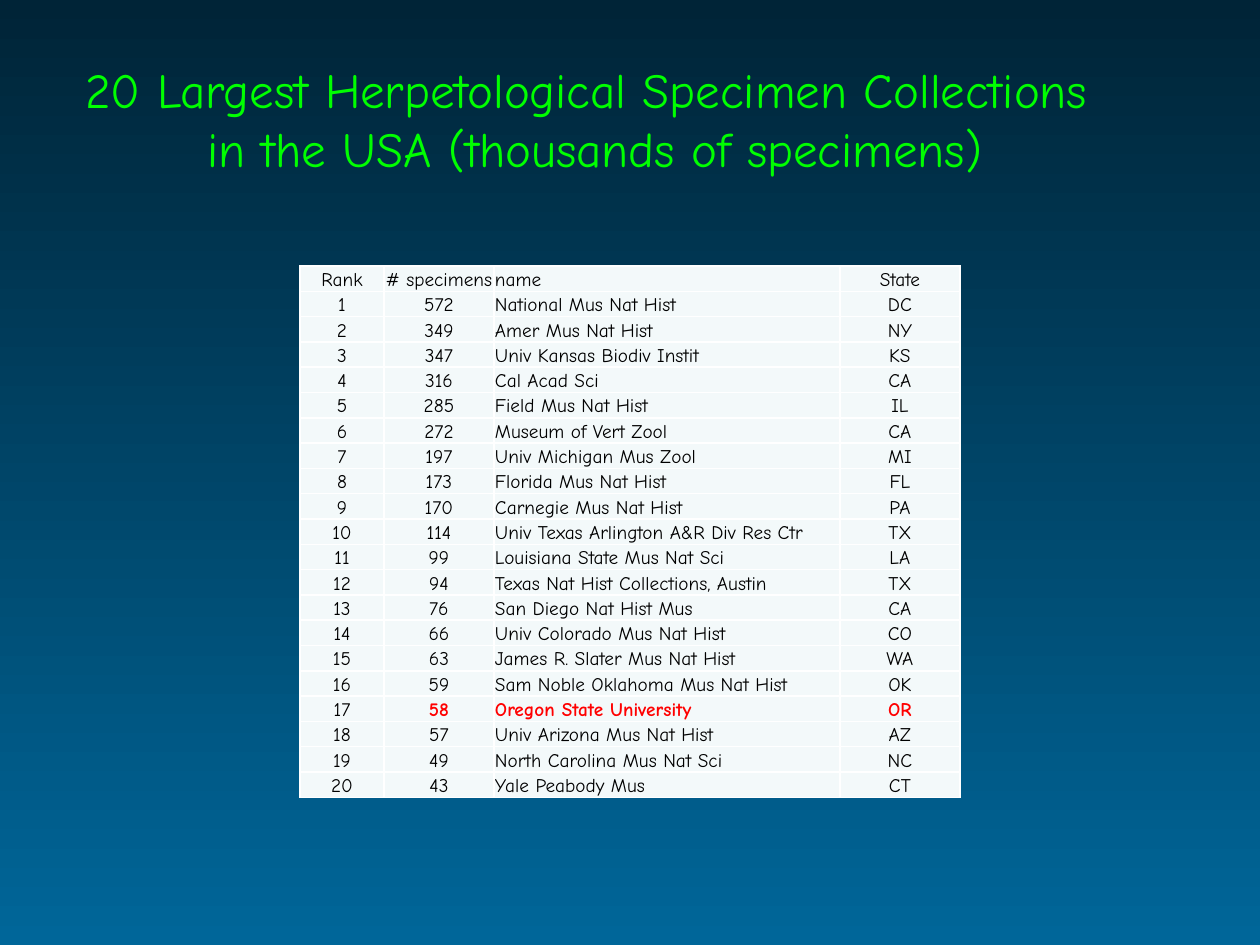
from lxml.etree import SubElement
from pptx import Presentation
from pptx.dml.color import RGBColor
from pptx.enum.text import MSO_ANCHOR as Anchor, MSO_AUTO_SIZE as Fit, PP_ALIGN as Align
from pptx.oxml.ns import qn
from pptx.util import Emu, Pt

SCALE = 914400 / 126
FONT = "Comic Neue"
NIGHT = RGBColor(0x00, 0x24, 0x37)
SEA = RGBColor(0x00, 0x66, 0x99)
GREEN = RGBColor(0x00, 0xFF, 0x00)
BLACK = RGBColor(0x00, 0x00, 0x00)
RED = RGBColor(0xFF, 0x00, 0x00)
PALE = RGBColor(0xF3, 0xF9, 0xFA)
WHITE = RGBColor(0xFF, 0xFF, 0xFF)

TITLE = [
    ("20 Largest Herpetological Specimen Collections", Align.LEFT),
    (" in the USA (thousands of specimens)", Align.CENTER),
]
HEADS = ("Rank", "# specimens", "name", "State")
WIDTHS = (84, 110, 346, 120)
ALIGNS = (Align.CENTER, Align.CENTER, Align.LEFT, Align.CENTER)
HOME = "Oregon State University"
MUSEUMS = [
    (572, "National Mus Nat Hist", "DC"),
    (349, "Amer Mus Nat Hist", "NY"),
    (347, "Univ Kansas Biodiv Instit", "KS"),
    (316, "Cal Acad Sci", "CA"),
    (285, "Field Mus Nat Hist", "IL"),
    (272, "Museum of Vert Zool", "CA"),
    (197, "Univ Michigan Mus Zool", "MI"),
    (173, "Florida Mus Nat Hist", "FL"),
    (170, "Carnegie Mus Nat Hist", "PA"),
    (114, "Univ Texas Arlington A&R Div Res Ctr", "TX"),
    (99, "Louisiana State Mus Nat Sci", "LA"),
    (94, "Texas Nat Hist Collections, Austin", "TX"),
    (76, "San Diego Nat Hist Mus", "CA"),
    (66, "Univ Colorado Mus Nat Hist", "CO"),
    (63, "James R. Slater Mus Nat Hist", "WA"),
    (59, "Sam Noble Oklahoma Mus Nat Hist", "OK"),
    (58, HOME, "OR"),
    (57, "Univ Arizona Mus Nat Hist", "AZ"),
    (49, "North Carolina Mus Nat Sci", "NC"),
    (43, "Yale Peabody Mus", "CT"),
]


def px(n):
    return Emu(round(n * SCALE))


def style(para, align, size, color, bold=False):
    para.alignment = align
    for run in para.runs:
        font = run.font
        font.name, font.size, font.bold = FONT, Pt(size), bold
        font.color.rgb = color


def border(cell):
    props = cell._tc.get_or_add_tcPr()
    for i, side in enumerate(("lnL", "lnR", "lnT", "lnB")):
        line = props.makeelement(qn(f"a:{side}"), {"w": str(Pt(1))})
        fill = SubElement(line, qn("a:solidFill"))
        SubElement(fill, qn("a:srgbClr"), val=str(WHITE))
        props.insert(i, line)


def paint(slide):
    fill = slide.background.fill
    fill.gradient()
    fill.gradient_angle = 270
    for stop, color, place in zip(fill.gradient_stops, (NIGHT, SEA), (0, 1)):
        stop.color.rgb = color
        stop.position = place


def add_title(slide, x, y, w, h):
    frame = slide.shapes.add_textbox(px(x), px(y), px(w), px(h)).text_frame
    frame.word_wrap = False
    frame.auto_size = Fit.SHAPE_TO_FIT_TEXT
    frame.text = "\n".join(text for text, _ in TITLE)
    for para, (_, align) in zip(frame.paragraphs, TITLE):
        style(para, align, 28, GREEN)


def fill_cell(cell, text, align, color, bold):
    cell.fill.solid()
    cell.fill.fore_color.rgb = PALE
    cell.vertical_anchor = Anchor.BOTTOM
    cell.margin_left = cell.margin_right = cell.margin_top = px(1)
    cell.margin_bottom = 0
    cell.text_frame.text = str(text)
    style(cell.text_frame.paragraphs[0], align, 11, color, bold)
    border(cell)


def add_ranks(slide, x, y, w, h):
    rows = [HEADS] + [(i, *row) for i, row in enumerate(MUSEUMS, 1)]
    table = slide.shapes.add_table(
        len(rows), len(HEADS), px(x), px(y), px(w), px(h)).table
    table.first_row = table.horz_banding = False
    for col, width in zip(table.columns, WIDTHS):
        col.width = px(width)
    for r, row in enumerate(rows):
        table.rows[r].height = px(h / len(rows))
        for c, (text, align) in enumerate(zip(row, ALIGNS)):
            bold = HOME in row and c > 0
            fill_cell(table.cell(r, c), text, align, RED if bold else BLACK, bold)


def main():
    deck = Presentation()
    deck.slide_width, deck.slide_height = px(1260), px(945)
    slide = deck.slides.add_slide(deck.slide_layouts[6])
    paint(slide)
    add_ranks(slide, 300, 266, sum(WIDTHS), 532)
    add_title(slide, 73, 53, 1126, 131)
    deck.save("out.pptx")


if __name__ == "__main__":
    main()
